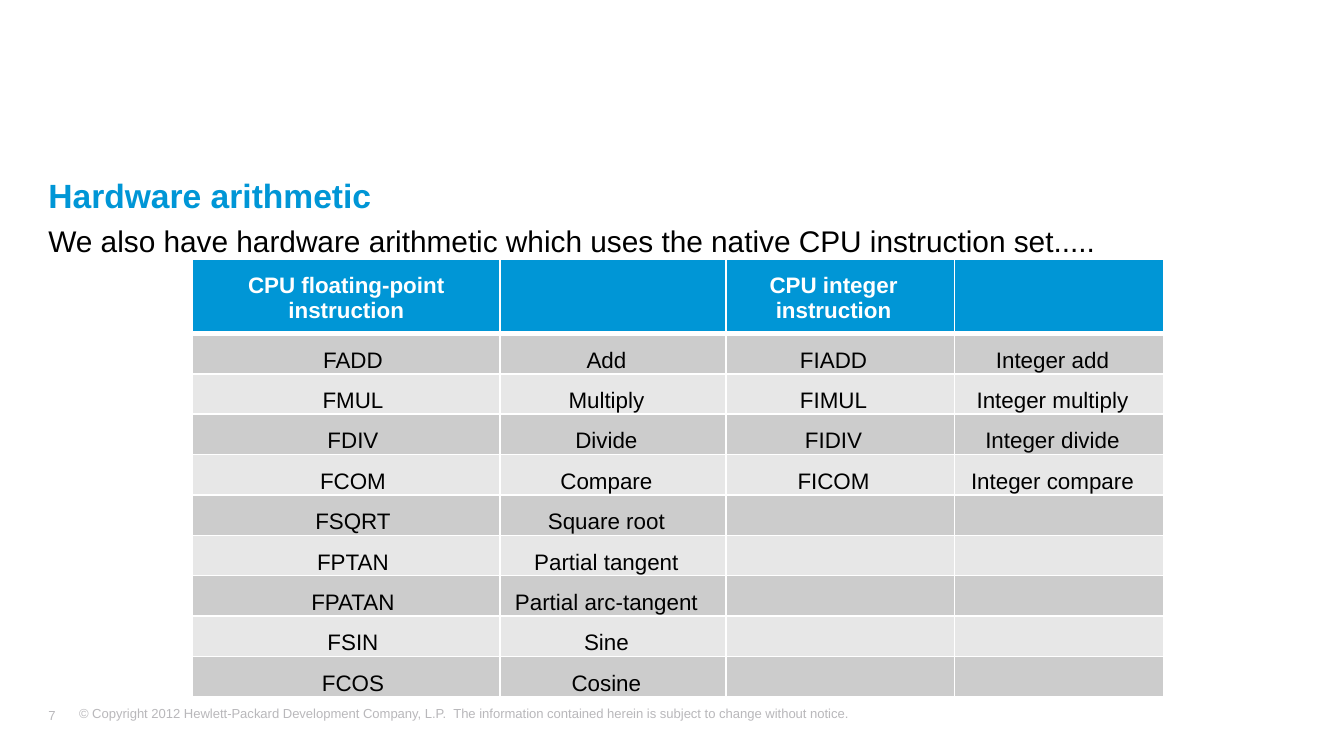
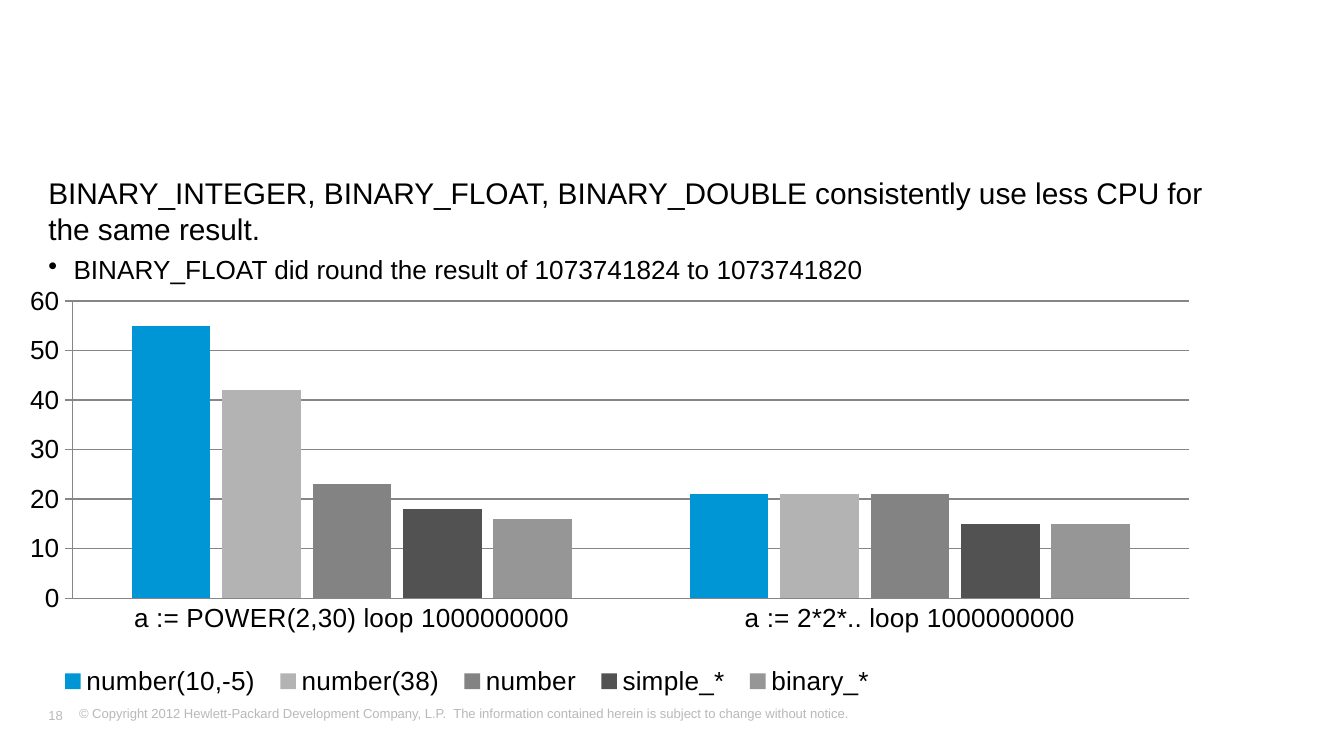
from pptx import Presentation
from pptx.chart.data import CategoryChartData
from pptx.dml.color import RGBColor
from pptx.enum import chart as ch, text
from pptx.oxml import parse_xml
from pptx.oxml.ns import nsdecls
from pptx.util import Pt

COLORS = {
    "blue": "0096D6", "black": "000000", "white": "FFFFFF", "footer": "B9B8BB",
    "band_dark": "CCCCCC", "band_light": "E7E7E7", "axis": "868686",
    "bar2": "B3B3B3", "bar3": "838383", "bar4": "525252", "bar5": "969696",
}
FONT = "Arial"
COPYRIGHT = ("© Copyright 2012 Hewlett-Packard Development Company, L.P.  "
             "The information contained herein is subject to change without notice.")


def rgb(name):
    return RGBColor.from_string(COLORS[name])


def style_font(font, size, color="black", bold=False):
    font.name, font.size, font.bold = FONT, Pt(size), bold
    font.color.rgb = rgb(color)


def write(p, content, size=12, color="black", bold=False, align=None, after=0, bullet=None):
    """Fill one paragraph with formatted text."""
    if bullet:
        pPr = p._p.get_or_add_pPr()
        pPr.set("marL", str(Pt(13.5)))
        pPr.set("indent", str(-Pt(13.5)))
        pPr.append(parse_xml(f'<a:buChar {nsdecls("a")} char="{bullet}"/>'))
    p.alignment = align
    p.space_after = Pt(after)
    if content:
        r = p.add_run()
        r.text = content
        style_font(r.font, size, color, bold)
    else:  # keeps an empty cell as low as its row
        p._p.append(parse_xml(f'<a:endParaRPr {nsdecls("a")} sz="{size * 100}"/>'))


def set_borders(cell, **widths):
    """Draw white cell borders; widths are keyed by side: L, R, T, B."""
    tcPr = cell._tc.get_or_add_tcPr()
    for side, width in widths.items():
        tcPr.append(parse_xml(
            f'<a:ln{side} {nsdecls("a")} w="{Pt(width)}"><a:solidFill>'
            f'<a:srgbClr val="{COLORS["white"]}"/></a:solidFill></a:ln{side}>'))


def manual_layout(x, y, w, h, inner=False):
    target = '<c:layoutTarget val="inner"/>' if inner else ""
    return parse_xml(
        f'<c:layout {nsdecls("c")}><c:manualLayout>{target}'
        '<c:xMode val="edge"/><c:yMode val="edge"/>'
        f'<c:x val="{x}"/><c:y val="{y}"/><c:w val="{w}"/><c:h val="{h}"/>'
        '</c:manualLayout></c:layout>')


class Deck:
    def __init__(self):
        self.prs = Presentation()
        self.prs.slide_width, self.prs.slide_height = Pt(720), Pt(405)
        self.s = None

    def slide(self, number):
        self.s = self.prs.slides.add_slide(self.prs.slide_layouts[6])
        # Footer
        self.text(35.3, 374.4, 630.7, 18, [dict(content=COPYRIGHT, size=7, color="footer")],
                  insets=(7.2, 3.6, 7.2, 3.6))
        self.text(25.9, 377.3, 25.2, 11.5, [dict(content=str(number), size=7, color="footer")],
                  insets=(0, 3.6, 7.2, 3.6), anchor=text.MSO_ANCHOR.MIDDLE, wrap=False)

    def text(self, x, y, w, h, paragraphs, insets=(0, 0, 0, 0),
             anchor=text.MSO_ANCHOR.TOP, wrap=True):
        tf = self.s.shapes.add_textbox(Pt(x), Pt(y), Pt(w), Pt(h)).text_frame
        tf.word_wrap, tf.vertical_anchor = wrap, anchor
        tf.margin_left, tf.margin_top, tf.margin_right, tf.margin_bottom = map(Pt, insets)
        for i, fmt in enumerate(paragraphs):
            write(tf.paragraphs[0] if i == 0 else tf.add_paragraph(), **fmt)

    def body(self, *paragraphs):
        self.text(25.9, 93.6, 639.4, 253.4, [dict(after=4, **fmt) for fmt in paragraphs])

    def table(self, x, y, widths, header_height, row_height, rows):
        table = self.s.shapes.add_table(
            len(rows), len(widths), Pt(x), Pt(y), Pt(sum(widths)),
            Pt(header_height + row_height * (len(rows) - 1))).table
        for column, width in zip(table.columns, widths):
            column.width = Pt(width)
        for i, row in enumerate(rows):
            header = i == 0
            table.rows[i].height = Pt(header_height if header else row_height)
            fill = "blue" if header else ("band_light", "band_dark")[i % 2]
            for j, content in enumerate(row):
                cell = table.cell(i, j)
                set_borders(cell, L=1, R=1, T=3 if i == 1 else 1, B=3 if header else 1)
                cell.fill.solid()
                cell.fill.fore_color.rgb = rgb(fill)
                cell.margin_left = cell.margin_top = Pt(7.2)
                cell.margin_right = Pt(14.4 if j else 7.2 if header else 0)
                cell.margin_bottom = Pt(3.6 if header else 0)
                cell.vertical_anchor = (text.MSO_ANCHOR.TOP if header
                                        else text.MSO_ANCHOR.MIDDLE)
                write(cell.text_frame.paragraphs[0], content, bold=header,
                      color="white" if header else "black", align=text.PP_ALIGN.CENTER)

    def column_chart(self, x, y, w, h, categories, series):
        data = CategoryChartData()
        data.categories = categories
        for name, values, _ in series:
            data.add_series(name, values)
        chart = self.s.shapes.add_chart(ch.XL_CHART_TYPE.COLUMN_CLUSTERED,
                                        Pt(x), Pt(y), Pt(w), Pt(h), data).chart
        style_font(chart.font, 18)
        chart.has_title = False

        # Bars
        plot = chart.plots[0]
        plot.gap_width, plot.overlap, plot.vary_by_categories = 150, -15, False
        for bars, (_, _, color) in zip(plot.series, series):
            bars.format.fill.solid()
            bars.format.fill.fore_color.rgb = rgb(color)

        # Axes
        values = chart.value_axis
        values.minimum_scale, values.maximum_scale, values.major_unit = 0, 60, 10
        values.major_tick_mark = ch.XL_TICK_MARK.CROSS
        values.has_major_gridlines = True
        chart.category_axis.major_tick_mark = ch.XL_TICK_MARK.NONE
        for axis in (values, chart.category_axis):
            style_font(axis.tick_labels.font, 14)
        for line in (values.format.line, chart.category_axis.format.line,
                     values.major_gridlines.format.line):
            line.color.rgb = rgb("axis")
            line.width = Pt(0.75)

        # Legend and plot placement
        chart.has_legend = True
        chart.legend.position = ch.XL_LEGEND_POSITION.BOTTOM
        chart.legend.include_in_layout = False
        style_font(chart.legend.font, 14)
        for tag, index, layout in (
                ("plotArea", 0, manual_layout(0.06, 0.09, 0.92, 0.645, inner=True)),
                ("legend", 1, manual_layout(0.04, 0.87, 0.69, 0.09))):
            part = chart.element.xpath(f"c:chart/c:{tag}")[0]
            for old in part.xpath("c:layout"):
                part.remove(old)
            part.insert(index, layout)


def main():
    deck = Deck()

    # Hardware arithmetic
    deck.slide(7)
    deck.body(
        dict(content="Hardware arithmetic", size=18, color="blue", bold=True),
        dict(content="We also have hardware arithmetic which uses the native CPU "
                     "instruction set.....", size=16))
    deck.table(103, 139, (165, 121, 122.4, 112.2), 24.5, 20.3, [
        ("CPU floating-point instruction", "", "CPU integer instruction", ""),
        ("FADD", "Add", "FIADD", "Integer add"),
        ("FMUL", "Multiply", "FIMUL", "Integer multiply"),
        ("FDIV", "Divide", "FIDIV", "Integer divide"),
        ("FCOM", "Compare", "FICOM", "Integer compare"),
        ("FSQRT", "Square root", "", ""),
        ("FPTAN", "Partial tangent", "", ""),
        ("FPATAN", "Partial arc-tangent", "", ""),
        ("FSIN", "Sine", "", ""),
        ("FCOS", "Cosine", "", ""),
    ])

    # CPU use by data type
    deck.slide(18)
    deck.column_chart(
        0, 139, 650, 247,
        ("a := POWER(2,30) loop 1000000000", "a := 2*2*.. loop 1000000000"),
        [("number(10,-5)", (55, 21), "blue"),
         ("number(38)", (42, 21), "bar2"),
         ("number", (23, 21), "bar3"),
         ("simple_*", (18, 15), "bar4"),
         ("binary_*", (16, 15), "bar5")])
    deck.body(
        dict(content="BINARY_INTEGER, BINARY_FLOAT, BINARY_DOUBLE consistently use less "
                     "CPU for the same result.", size=16),
        dict(content="BINARY_FLOAT did round the result of 1073741824 to 1073741820",
             size=14, bullet="•"))

    deck.prs.save("out.pptx")


if __name__ == "__main__":
    main()
